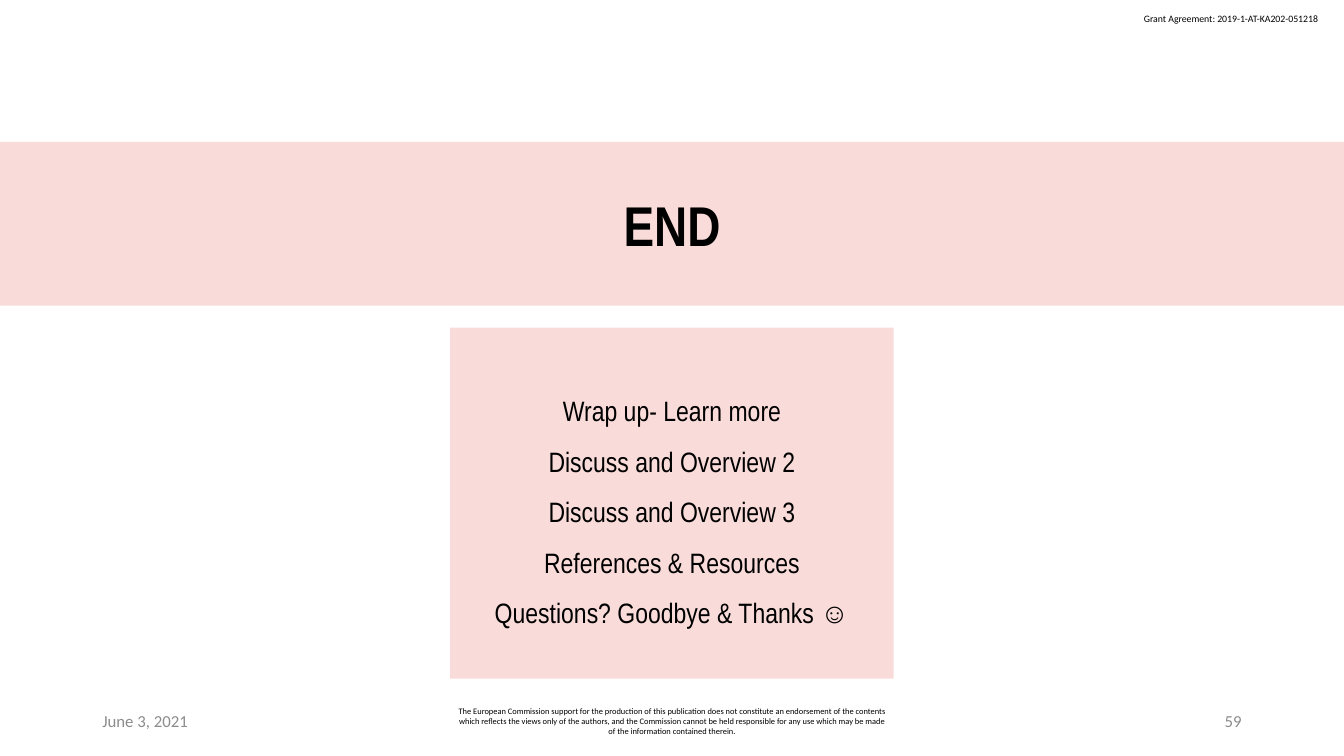
from pptx import Presentation
from pptx.dml.color import RGBColor
from pptx.enum.shapes import MSO_SHAPE
from pptx.enum.text import MSO_ANCHOR, PP_ALIGN
from pptx.util import Pt

BLACK = RGBColor(0x00, 0x00, 0x00)
GREY = RGBColor(0x8C, 0x8C, 0x8C)
PINK = RGBColor(0xF9, 0xDB, 0xD9)

PAGE_WIDTH, PAGE_HEIGHT = 960, 540
GRANT = "Grant Agreement: 2019-1-AT-KA202-051218"
DISCLAIMER = (
    "The European Commission support for the production of this publication "
    "does not constitute an endorsement of the contents which reflects the "
    "views only of the authors, and the Commission cannot be held responsible "
    "for any use which may be made of the information contained therein."
)
TOPICS = [
    "Wrap up- Learn more",
    "Discuss and Overview 2",
    "Discuss and Overview 3",
    "References & Resources",
    "Questions? Goodbye & Thanks ☺",
]


def write_lines(frame, lines, size, font, color=BLACK, align=PP_ALIGN.LEFT,
                bold=False, spacing=1.0):
    """Fill a text frame with one paragraph per line in a single style."""
    for index, line in enumerate(lines):
        para = frame.add_paragraph() if index else frame.paragraphs[0]
        para.text = line
        para.alignment = align
        para.line_spacing = spacing
        para.font.size = Pt(size)
        para.font.name = font
        para.font.bold = bold
        para.font.color.rgb = color


def add_label(page, box, text, size, wrap=True, anchor=MSO_ANCHOR.MIDDLE, **style):
    """Place a small Calibri label in the given box."""
    frame = page.shapes.add_textbox(*map(Pt, box)).text_frame
    frame.word_wrap = wrap
    frame.vertical_anchor = anchor
    write_lines(frame, [text], size, "Calibri", **style)


def add_panel(page, box, lines, size, **style):
    """Place a pink rectangle with centred lines of text."""
    panel = page.shapes.add_shape(MSO_SHAPE.RECTANGLE, *map(Pt, box))
    panel.shadow.inherit = False
    panel.fill.solid()
    panel.fill.fore_color.rgb = PINK
    panel.line.fill.background()
    frame = panel.text_frame
    frame.word_wrap = True
    frame.vertical_anchor = MSO_ANCHOR.MIDDLE
    frame.margin_left = frame.margin_right = Pt(9.6)
    frame.margin_top = frame.margin_bottom = Pt(4.8)
    write_lines(frame, lines, size, "Arial Narrow", align=PP_ALIGN.CENTER, **style)


def add_footer(page, left, top, width, height):
    """Place the date, the disclaimer and the page number along the footer."""
    side, middle = 216, 324
    add_label(page, (left, top, side, height), "June 3, 2021", 12, color=GREY)
    add_label(page, (left + (width - middle) / 2, top, middle, height),
              DISCLAIMER, 6, align=PP_ALIGN.CENTER)
    add_label(page, (left + width - side, top, side, height), "59", 12,
              color=GREY, align=PP_ALIGN.RIGHT)


def build_end_page(deck):
    """Build the closing page."""
    page = deck.slides.add_slide(deck.slide_layouts[6])
    add_label(page, (810, 5.6, 142, 15.8), GRANT, 7, wrap=False,
              anchor=MSO_ANCHOR.TOP)
    add_footer(page, 66, 500.5, 828, 28.75)
    add_panel(page, (0, 101.3, PAGE_WIDTH, 117), ["END"], 40, bold=True)
    add_panel(page, (321.6, 234, 316.8, 250.8), TOPICS, 20, spacing=1.5)


def main():
    """Create and save the deck."""
    deck = Presentation()
    deck.slide_width, deck.slide_height = Pt(PAGE_WIDTH), Pt(PAGE_HEIGHT)
    build_end_page(deck)
    deck.save("out.pptx")


if __name__ == "__main__":
    main()
